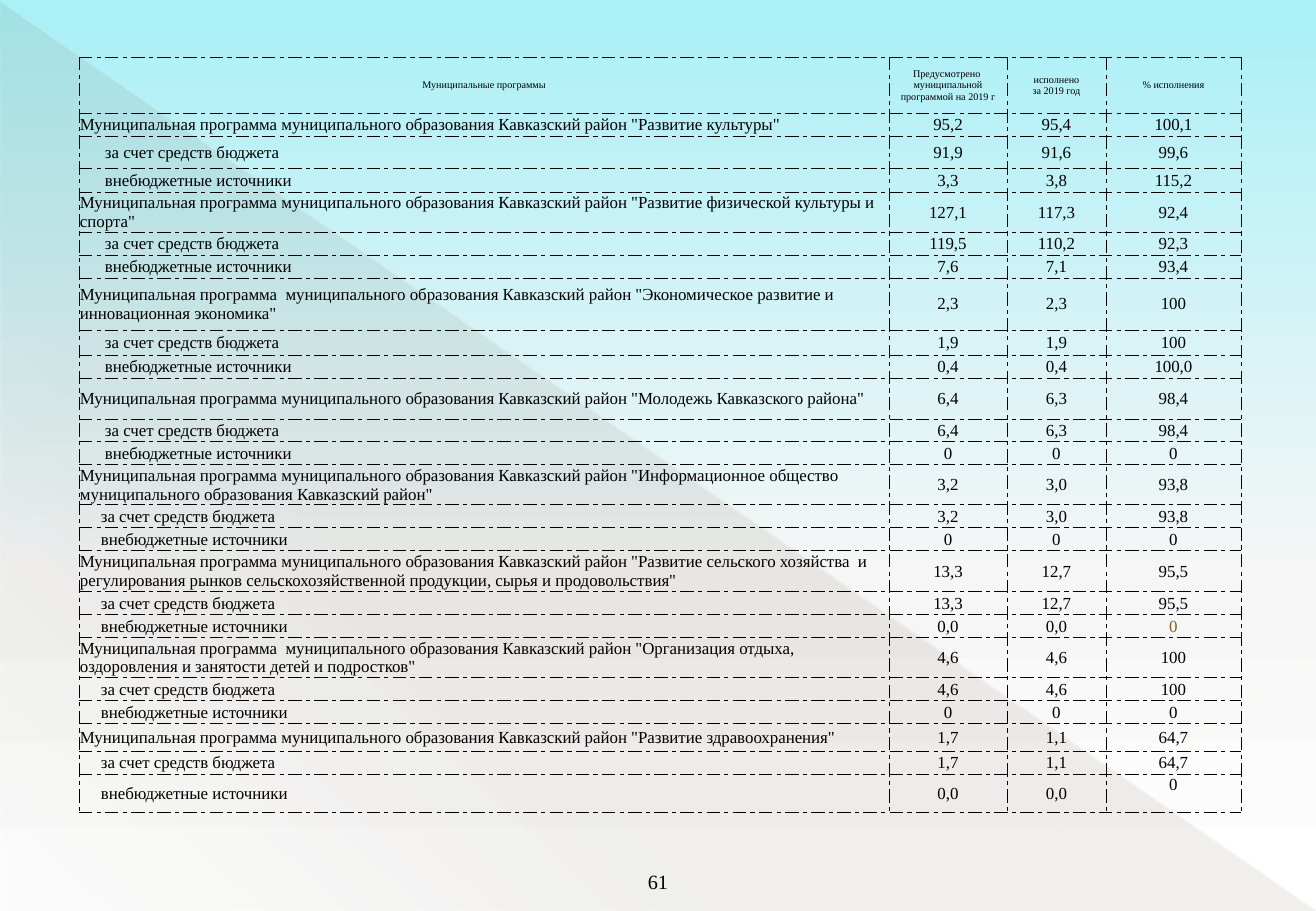
from lxml.etree import SubElement
from pptx import Presentation
from pptx.dml.color import RGBColor
from pptx.enum.shapes import MSO_CONNECTOR, MSO_SHAPE
from pptx.enum.text import MSO_ANCHOR, PP_ALIGN
from pptx.oxml import parse_xml
from pptx.oxml.ns import nsdecls, qn
from pptx.util import Pt

PX = 7526  # EMU in one px

BLACK = RGBColor(0x00, 0x00, 0x00)
OCHRE = RGBColor(0x89, 0x62, 0x12)
AQUA = RGBColor(0xA9, 0xF0, 0xF7)
PALE_GREY = RGBColor(0xF6, 0xF6, 0xF6)
WHITE = RGBColor(0xFF, 0xFF, 0xFF)
BROWN = RGBColor(0x56, 0x4B, 0x3C)
CREAM = RGBColor(0xFB, 0xFC, 0xE0)
LIGHT_CREAM = RGBColor(0xFC, 0xFD, 0xE3)

COLUMN_WIDTHS = [810, 118, 99, 135]
HEADER_HEIGHT = 56
HEADERS = ["Муниципальные программы",
           "Предусмотрено  муниципальной программой на 2019 г",
           "исполнено\nза 2019 год", "% исполнения"]
PREFIX = "Муниципальная программа муниципального образования Кавказский район "
WIDE_PREFIX = PREFIX.replace("программа ", "программа  ")
SOURCES = ["за счет средств бюджета", "внебюджетные источники"]

# Programme, indent of its sources, row heights, and values of the three rows
PROGRAMMES = [
    (PREFIX + '"Развитие культуры"', 26, (23, 32, 24),
     ("95,2 95,4 100,1", "91,9 91,6 99,6", "3,3 3,8 115,2")),
    (PREFIX + '"Развитие физической культуры и спорта"', 26, (40, 23, 23),
     ("127,1 117,3 92,4", "119,5 110,2 92,3", "7,6 7,1 93,4")),
    (WIDE_PREFIX + '"Экономическое развитие и инновационная экономика"', 26, (52, 25, 23),
     ("2,3 2,3 100", "1,9 1,9 100", "0,4 0,4 100,0")),
    (PREFIX + '"Молодежь Кавказского района"', 26, (41, 23, 23),
     ("6,4 6,3 98,4", "6,4 6,3 98,4", "0 0 0")),
    (PREFIX + '"Информационное общество муниципального образования Кавказский район"',
     22, (40, 23, 23), ("3,2 3,0 93,8", "3,2 3,0 93,8", "0 0 0")),
    (PREFIX + '"Развитие сельского хозяйства  и регулирования рынков '
     'сельскохозяйственной продукции, сырья и продовольствия"', 22, (41, 23, 23),
     ("13,3 12,7 95,5", "13,3 12,7 95,5", "0,0 0,0 0")),
    (WIDE_PREFIX + '"Организация отдыха, оздоровления и занятости детей и подростков"',
     22, (40, 23, 23), ("4,6 4,6 100", "4,6 4,6 100", "0 0 0")),
    (PREFIX + '"Развитие здравоохранения"', 22, (28, 23, 38),
     ("1,7 1,1 64,7", "1,7 1,1 64,7", "0,0 0,0 0")),
]
OCHRE_CELL = (18, 3)
TOP_CELL = (24, 3)


def set_all(target, values):
    for name, value in values.items():
        setattr(target, name, value)


def set_alpha(color, percent):
    SubElement(color, qn("a:alpha")).set("val", str(percent * 1000))


class SlideBuilder:
    font = "Times New Roman"

    def __init__(self, page):
        self.page = page

    def gradient(self, fill, element, stops, angle):
        """Fill with (position, colour, opacity) stops; angle runs clockwise."""
        fill.gradient()
        fill.gradient_angle = 360 - angle
        stop_list = element.xpath(".//a:gsLst")[0]
        for old in list(stop_list):
            stop_list.remove(old)
        for position, color, opacity in stops:
            stop = SubElement(stop_list, qn("a:gs"))
            stop.set("pos", str(position * 1000))
            tint = SubElement(stop, qn("a:srgbClr"))
            tint.set("val", str(color))
            set_alpha(tint, opacity)

    def background(self, stops, angle):
        self.gradient(self.page.background.fill, self.page.element, stops, angle)

    def triangle(self, box, stops, angle):
        shape = self.page.shapes.add_shape(MSO_SHAPE.RIGHT_TRIANGLE, *(n * PX for n in box))
        shape.shadow.inherit = False
        shape.line.fill.background()
        self.gradient(shape.fill, shape.element, stops, angle)

    def line(self, ends, color, width, opacity):
        line = self.page.shapes.add_connector(MSO_CONNECTOR.STRAIGHT, *(n * PX for n in ends))
        line.line.color.rgb = color
        line.line.width = Pt(width)
        set_alpha(line.element.xpath(".//a:ln//a:srgbClr")[0], opacity)
        SubElement(line.element.spPr, qn("a:effectLst"))

    def fill_text(self, frame, text, size, align, color=BLACK):
        frame.text = text
        for para in frame.paragraphs:
            para.alignment = align
            for span in para.runs:
                set_all(span.font, {"name": self.font, "size": Pt(size)})
                span.font.color.rgb = color

    def text(self, box, text, size):
        frame = self.page.shapes.add_textbox(*(n * PX for n in box)).text_frame
        set_all(frame, {"word_wrap": True, "vertical_anchor": MSO_ANCHOR.BOTTOM})
        self.fill_text(frame, text, size, PP_ALIGN.CENTER)

    def cell(self, cell, text, size, align, indent=1, color=BLACK, anchor=MSO_ANCHOR.MIDDLE):
        set_all(cell, {"margin_left": indent * PX, "margin_right": PX, "margin_top": PX,
                       "margin_bottom": 0, "vertical_anchor": anchor})
        self.fill_text(cell.text_frame, text, size, align, color)
        cell.fill.background()
        properties = cell._tc.get_or_add_tcPr()
        for index, side in enumerate(("lnL", "lnR", "lnT", "lnB")):
            properties.insert(index, parse_xml(
                f'<a:{side} {nsdecls("a")} w="3175"><a:solidFill><a:srgbClr val="{BLACK}"/>'
                f'</a:solidFill><a:prstDash val="sysDashDot"/></a:{side}>'))

    def table(self, left, top, widths, heights):
        table = self.page.shapes.add_table(
            len(heights), len(widths), left * PX, top * PX,
            sum(widths) * PX, sum(heights) * PX).table
        set_all(table, {"first_row": False, "horz_banding": False})
        for column, width in zip(table.columns, widths):
            column.width = width * PX
        for row, height in zip(table.rows, heights):
            row.height = height * PX
        return table


def main():
    deck = Presentation()
    set_all(deck, {"slide_width": 1316 * PX, "slide_height": 911 * PX})
    slide = SlideBuilder(deck.slides.add_slide(deck.slide_layouts[6]))

    # Backdrop
    slide.background([(0, AQUA, 100), (63, PALE_GREY, 100), (100, WHITE, 100)], 90)
    slide.triangle((1, 2, 1315, 909), [(0, BROWN, 10), (70, BROWN, 8), (100, BROWN, 1)], 133)
    slide.line((0, 1, 1315, 910), CREAM, 0.39, 35)
    slide.line((1316, 657, 931, 910), LIGHT_CREAM, 0.47, 45)

    # Programme table
    heights = [HEADER_HEIGHT] + [height for entry in PROGRAMMES for height in entry[2]]
    table = slide.table(79, 57, COLUMN_WIDTHS, heights)
    for column, header in enumerate(HEADERS):
        slide.cell(table.cell(0, column), header, 6, PP_ALIGN.CENTER)
    row = 0
    for programme, indent, _, value_rows in PROGRAMMES:
        for label, values in zip([programme] + SOURCES, value_rows):
            row += 1
            slide.cell(table.cell(row, 0), label, 10, PP_ALIGN.LEFT,
                       1 if label == programme else indent)
            for column, value in enumerate(values.split(), 1):
                place = (row, column)
                slide.cell(table.cell(*place), value, 10, PP_ALIGN.CENTER,
                           color=OCHRE if place == OCHRE_CELL else BLACK,
                           anchor=MSO_ANCHOR.TOP if place == TOP_CELL else MSO_ANCHOR.MIDDLE)

    # Page number
    slide.text((632, 852, 52, 48), "61", 12)
    deck.save("out.pptx")


if __name__ == "__main__":
    main()
